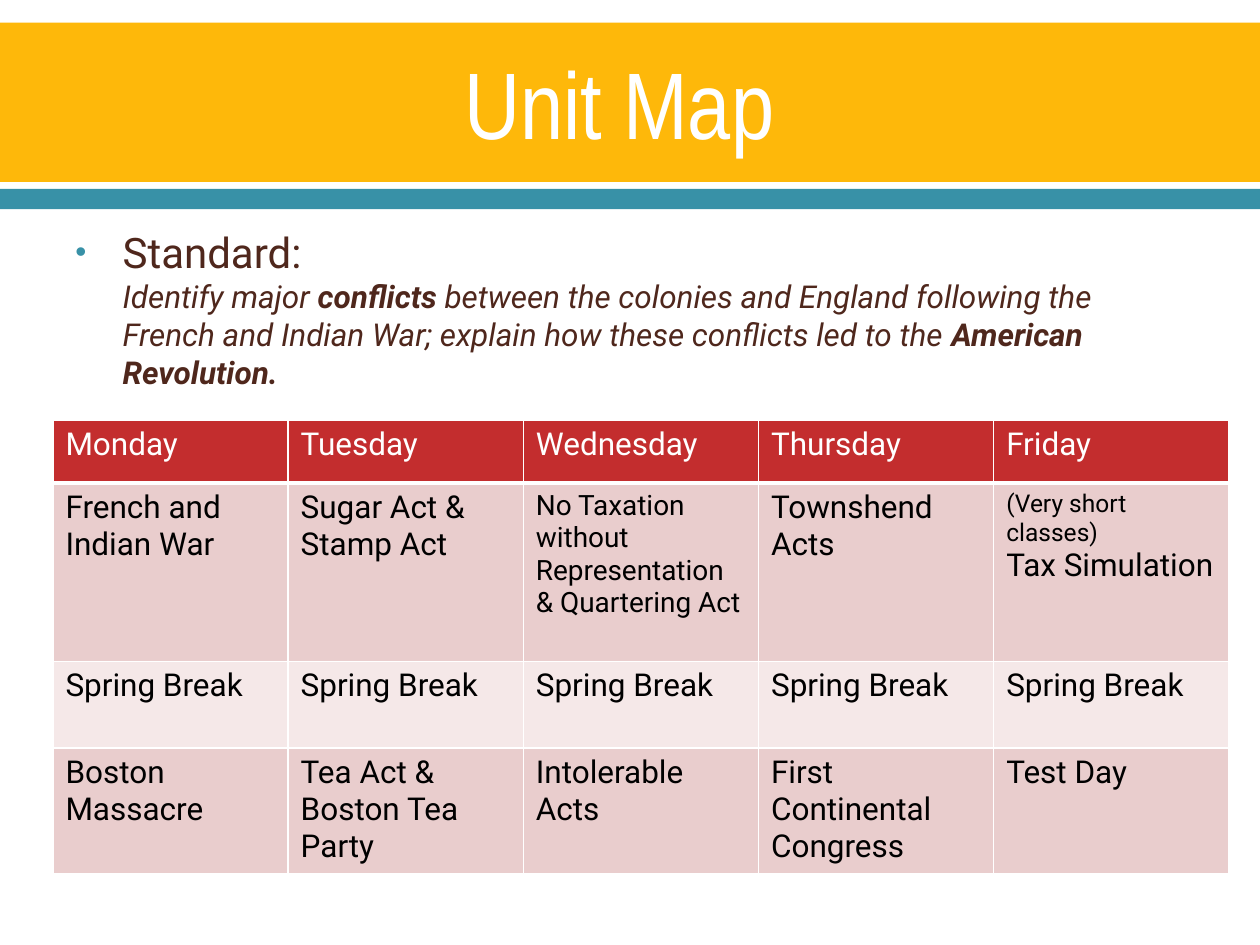
from dataclasses import dataclass

from lxml.etree import SubElement
from pptx import Presentation
from pptx.dml.color import RGBColor
from pptx.enum.shapes import MSO_SHAPE
from pptx.enum.text import MSO_ANCHOR, PP_ALIGN
from pptx.oxml.ns import qn
from pptx.util import Pt


@dataclass(frozen=True)
class Theme:
    gold: str = "FEB80A"
    teal: str = "3891A7"
    brown: str = "4F271C"
    white: str = "FFFFFF"
    black: str = "000000"
    red: str = "C32D2E"
    rose: str = "E9CDCD"
    blush: str = "F5E8E8"
    title_font: str = "Arial Narrow"
    body_font: str = "Roboto"
    title_size: int = 54
    lead_size: int = 24
    body_size: int = 18
    small_size: int = 16
    note_size: int = 14


def add_text(para, text, *, font, size, color, bold=False, italic=False):
    span = para.add_run()
    span.text = text
    span.font.name = font
    span.font.size = Pt(size)
    span.font.bold = bold
    span.font.italic = italic
    span.font.color.rgb = RGBColor.from_string(color)


def add_bullet(para, color, indent):
    properties = para._p.get_or_add_pPr()
    properties.set("marL", str(Pt(indent)))
    properties.set("indent", str(-Pt(indent)))
    bullet_color = SubElement(properties, qn("a:buClr"))
    SubElement(bullet_color, qn("a:srgbClr"), val=color)
    SubElement(properties, qn("a:buSzPct"), val="75000")
    SubElement(properties, qn("a:buFont"), typeface="Arial")
    SubElement(properties, qn("a:buChar"), char="•")


def add_borders(cell, color, bottom):
    properties = cell._tc.get_or_add_tcPr()
    for side, width in (("L", 1), ("R", 1), ("T", 1), ("B", bottom)):
        line = SubElement(properties, qn(f"a:ln{side}"), w=str(Pt(width)))
        fill = SubElement(line, qn("a:solidFill"))
        SubElement(fill, qn("a:srgbClr"), val=color)


class SlideBuilder:
    def __init__(self, page, theme):
        self.page = page
        self.theme = theme

    def band(self, top, height, color):
        box = self.page.shapes.add_shape(
            MSO_SHAPE.RECTANGLE, Pt(0), Pt(top), Pt(720), Pt(height))
        box.shadow.inherit = False
        box.fill.solid()
        box.fill.fore_color.rgb = RGBColor.from_string(color)
        box.line.fill.background()

    def text_box(self, left, top, width, height, anchor=MSO_ANCHOR.TOP):
        box = self.page.shapes.add_textbox(Pt(left), Pt(top), Pt(width), Pt(height))
        box.text_frame.word_wrap = True
        box.text_frame.vertical_anchor = anchor
        return box.text_frame.paragraphs[0]

    def title(self, text):
        theme = self.theme
        para = self.text_box(36, 14.4, 648, 87.8, MSO_ANCHOR.MIDDLE)
        para.alignment = PP_ALIGN.CENTER
        add_text(para, text, font=theme.title_font, size=theme.title_size,
                 color=theme.white)

    def standard(self, lead, parts):
        theme = self.theme
        para = self.text_box(36, 126, 648, 356.4)
        add_bullet(para, theme.teal, 27)
        add_text(para, lead, font=theme.body_font, size=theme.lead_size,
                 color=theme.brown)
        para.add_line_break()
        for text, bold in parts:
            add_text(para, text, font=theme.body_font, size=theme.body_size,
                     color=theme.brown, bold=bold, italic=True)

    def cell(self, cell, lines, fill, color, bottom):
        add_borders(cell, self.theme.white, bottom)
        cell.fill.solid()
        cell.fill.fore_color.rgb = RGBColor.from_string(fill)
        frame = cell.text_frame
        for index, (text, size) in enumerate(lines):
            para = frame.add_paragraph() if index else frame.paragraphs[0]
            add_text(para, text, font=self.theme.body_font, size=size, color=color)

    def calendar(self, left, top, column_width, row_heights, rows):
        theme = self.theme
        columns = len(rows[0])
        table = self.page.shapes.add_table(
            len(rows), columns, Pt(left), Pt(top),
            Pt(column_width * columns), Pt(sum(row_heights))).table
        table.horz_banding = False
        for column in table.columns:
            column.width = Pt(column_width)
        for number, (row, height, entries) in enumerate(
                zip(table.rows, row_heights, rows)):
            row.height = Pt(height)
            header = number == 0
            fill = theme.red if header else (theme.blush, theme.rose)[number % 2]
            color = theme.white if header else theme.black
            for cell, entry in zip(row.cells, entries):
                lines = [(entry, theme.body_size)] if isinstance(entry, str) else entry
                self.cell(cell, lines, fill, color, 3 if header else 1)


def main():
    theme = Theme()
    deck = Presentation()
    deck.slide_width, deck.slide_height = Pt(720), Pt(540)
    builder = SlideBuilder(deck.slides.add_slide(deck.slide_layouts[6]), theme)
    builder.band(13, 91, theme.gold)
    builder.band(108, 11.5, theme.teal)
    builder.title("Unit Map ")
    builder.standard("Standard:", [
        ("Identify major ", False),
        ("conflicts", True),
        (" between the colonies and England following the French and Indian War; "
         "explain how these conflicts led to the ", False),
        ("American Revolution.", True),
    ])
    builder.calendar(30.25, 240, 134.4, [36, 102, 49.5, 70], [
        ["Monday", "Tuesday", "Wednesday", "Thursday", "Friday"],
        ["French and Indian War", "Sugar Act & Stamp Act",
         [("No Taxation without Representation & Quartering Act", theme.small_size)],
         "Townshend Acts",
         [("(Very short classes)", theme.note_size),
          ("Tax Simulation", theme.body_size)]],
        ["Spring Break"] * 5,
        ["Boston Massacre", "Tea Act & Boston Tea Party", "Intolerable Acts",
         "First Continental Congress", "Test Day"],
    ])
    deck.save("out.pptx")


if __name__ == "__main__":
    main()
